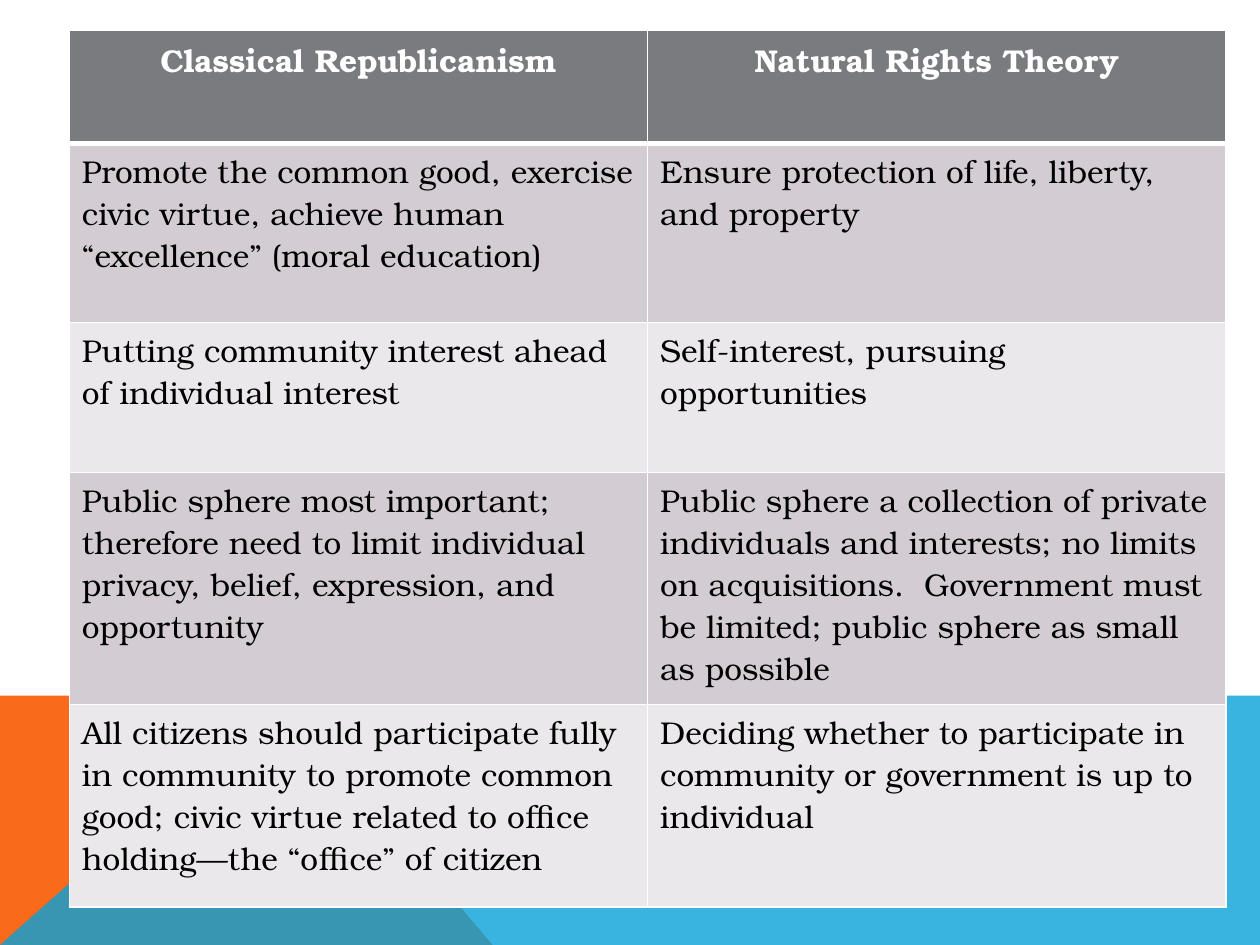
import pptx
import pptx.dml.color
import pptx.enum.text
import pptx.oxml
import pptx.oxml.ns
import pptx.util
from pptx.util import Inches

COLORS = {
    "white": "FFFFFF", "black": "000000", "header": "797B7E",
    "odd_row": "D3CDD3", "even_row": "EAE8EA",
    "orange": "F96A1B", "blue": "08A1D9",
}
FONT = "TeX Gyre Bonum"
ROW_HEIGHTS = [0.9, 1.42, 1.19, 1.84, 1.61]
COMPARISON = [
    ("Classical Republicanism", "Natural Rights Theory"),
    ("Promote the common good, exercise civic virtue, achieve human “excellence” (moral education)",
     "Ensure protection of life, liberty, and property"),
    ("Putting community interest ahead of individual interest",
     "Self-interest, pursuing opportunities"),
    ("Public sphere most important; therefore need to limit individual privacy, belief, "
     "expression, and opportunity",
     "Public sphere a collection of private individuals and interests; no limits on "
     "acquisitions.  Government must be limited; public sphere as small as possible"),
    ("All citizens should participate fully in community to promote common good; civic virtue "
     "related to office holding—the “office” of citizen",
     "Deciding whether to participate in community or government is up to individual"),
]


def rgb(name):
    return pptx.dml.color.RGBColor.from_string(COLORS[name])


def add_polygon(slide, points, color, opacity=100):
    start, *rest = [(Inches(x), Inches(y)) for x, y in points]
    builder = slide.shapes.build_freeform(*start, scale=1.0)
    builder.add_line_segments(rest, close=True)
    polygon = builder.convert_to_shape()
    polygon.shadow.inherit = False
    polygon.fill.solid()
    polygon.fill.fore_color.rgb = rgb(color)
    polygon.line.fill.background()
    if opacity < 100:
        srgb = polygon.fill._xPr.find(".//" + pptx.oxml.ns.qn("a:srgbClr"))
        srgb.append(pptx.oxml.parse_xml(
            f'<a:alpha {pptx.oxml.ns.nsdecls("a")} val="{opacity * 1000}"/>'))


def add_footer_band(slide, left, top, width, height):
    """Orange wedge with a translucent blue band crossing it."""
    bottom, peak = top + height, left + 2.23
    add_polygon(slide, [(left, bottom), (left, top), (peak, top), (left + 3.91, bottom)],
                "orange")
    add_polygon(slide, [(left, bottom), (peak, top), (left + width, top),
                        (left + width, bottom)], "blue", opacity=80)


def set_borders(cell, widths):
    """Draw white borders; widths maps L, R, T and B to points, in that order."""
    properties = cell._tc.get_or_add_tcPr()
    for index, (side, width) in enumerate(widths.items()):
        properties.insert(index, pptx.oxml.parse_xml(
            f'<a:ln{side} {pptx.oxml.ns.nsdecls("a")} w="{pptx.util.Pt(width)}">'
            f'<a:solidFill><a:srgbClr val="{COLORS["white"]}"/></a:solidFill></a:ln{side}>'))


def fill_cell(cell, text, row):
    is_header = row == 0
    cell.text = text
    cell.fill.solid()
    cell.fill.fore_color.rgb = rgb(
        "header" if is_header else "odd_row" if row % 2 else "even_row")
    paragraph = cell.text_frame.paragraphs[0]
    if is_header:
        paragraph.alignment = pptx.enum.text.PP_ALIGN.CENTER
    font = paragraph.runs[0].font
    for name, value in {"name": FONT, "size": pptx.util.Pt(18), "bold": is_header}.items():
        setattr(font, name, value)
    font.color.rgb = rgb("white" if is_header else "black")
    set_borders(cell, {"L": 1, "R": 1, "T": 3 if row == 1 else 1, "B": 3 if is_header else 1})


def add_comparison_table(slide, left, top, width, height):
    table = slide.shapes.add_table(
        len(COMPARISON), 2, Inches(left), Inches(top), Inches(width), Inches(height)).table
    for column in table.columns:
        column.width = Inches(width / 2)
    for row, (texts, row_height) in enumerate(zip(COMPARISON, ROW_HEIGHTS)):
        table.rows[row].height = Inches(row_height)
        for column, text in enumerate(texts):
            fill_cell(table.cell(row, column), text, row)


def main():
    presentation = pptx.Presentation()
    presentation.slide_width = Inches(10)
    presentation.slide_height = Inches(7.5)
    slide = presentation.slides.add_slide(presentation.slide_layouts[6])
    slide.background.fill.solid()
    slide.background.fill.fore_color.rgb = rgb("white")
    add_footer_band(slide, 0, 5.52, 10, 1.98)
    add_comparison_table(slide, 0.55, 0.24, 9.18, sum(ROW_HEIGHTS))
    presentation.save("out.pptx")


if __name__ == "__main__":
    main()
